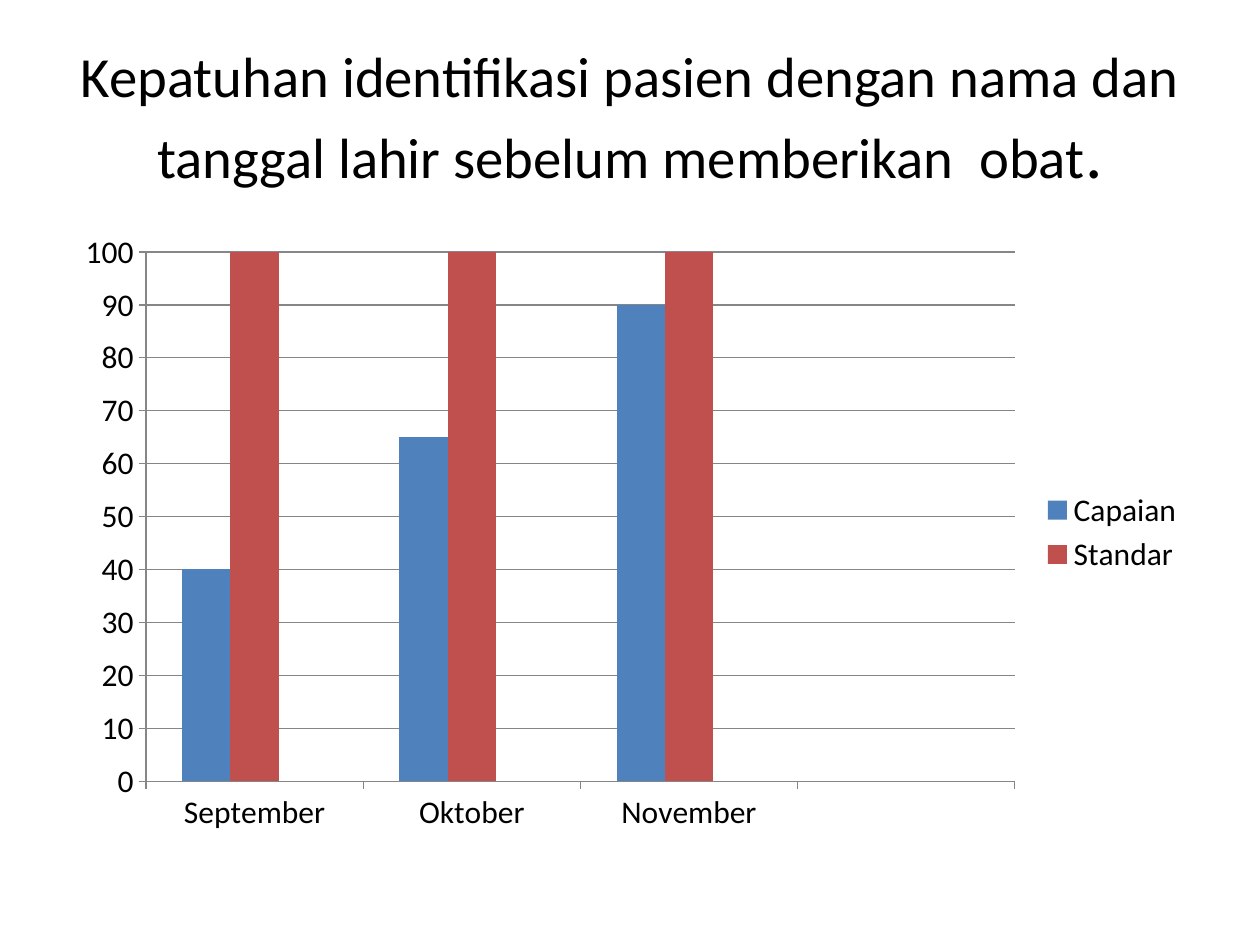
import dataclasses

import lxml.etree
import pptx
import pptx.chart.data
import pptx.dml.color
import pptx.enum.chart
import pptx.enum.text
import pptx.oxml
import pptx.oxml.ns
import pptx.util

COLORS = {
    "text": "000000",
    "grid": "868686",
    "achieved": "4F81BD",
    "standard": "C0504D",
    "empty": "9BBB59",
}
FONT = "Calibri"


@dataclasses.dataclass(frozen=True)
class Series:
    name: str
    values: tuple[float | None, ...]
    color: str
    in_legend: bool = True


CATEGORIES = ("September", "Oktober", "November", "")
SERIES = (
    Series("Capaian", (40, 65, 90, None), "achieved"),
    Series("Standar", (100, 100, 100, None), "standard"),
    Series("Series 3", (None,) * 4, "empty", in_legend=False),
)


def rgb(name: str) -> pptx.dml.color.RGBColor:
    return pptx.dml.color.RGBColor.from_string(COLORS[name])


def format_font(font, size: float, color: str = "text") -> None:
    font.name = FONT
    font.size = pptx.util.Pt(size)
    font.bold = False
    font.color.rgb = rgb(color)


def add_text(paragraph, text: str, *, size: float, color: str = "text") -> None:
    run = paragraph.add_run()
    run.text = text
    format_font(run.font, size, color)


def format_line(line) -> None:
    line.color.rgb = rgb("grid")
    line.width = pptx.util.Pt(0.75)


def fill_title(title) -> None:
    title.left, title.top = pptx.util.Pt(36), pptx.util.Pt(21.6)
    title.width, title.height = pptx.util.Pt(648), pptx.util.Pt(90)
    frame = title.text_frame
    frame.word_wrap = True
    frame.auto_size = pptx.enum.text.MSO_AUTO_SIZE.NONE
    frame.vertical_anchor = pptx.enum.text.MSO_ANCHOR.MIDDLE
    paragraph = frame.paragraphs[0]
    paragraph.alignment = pptx.enum.text.PP_ALIGN.CENTER
    add_text(
        paragraph,
        "Kepatuhan identifikasi pasien dengan nama dan tanggal lahir sebelum memberikan  obat",
        size=32.4,
    )
    add_text(paragraph, ".", size=39.6)


def hide_legend_entry(legend, index: int) -> None:
    entry = pptx.oxml.parse_xml(
        f'<c:legendEntry {pptx.oxml.ns.nsdecls("c")}>'
        f'<c:idx val="{index}"/><c:delete val="1"/></c:legendEntry>'
    )
    legend._element.find(pptx.oxml.ns.qn("c:legendPos")).addnext(entry)


def add_column_chart(slide, series_list: tuple[Series, ...]) -> None:
    data = pptx.chart.data.CategoryChartData()
    data.categories = CATEGORIES
    for series in series_list:
        data.add_series(series.name, series.values)
    chart = slide.shapes.add_chart(
        pptx.enum.chart.XL_CHART_TYPE.COLUMN_CLUSTERED,
        pptx.util.Pt(36), pptx.util.Pt(126), pptx.util.Pt(648), pptx.util.Pt(356.4),
        data,
    ).chart
    chart.has_title = False
    format_font(chart.font, 18)

    plot = chart.plots[0]
    plot.gap_width = 150
    plot.overlap = 0
    plot.vary_by_categories = False
    for drawn, series in zip(plot.series, series_list):
        drawn.format.fill.solid()
        drawn.format.fill.fore_color.rgb = rgb(series.color)
        drawn.invert_if_negative = False

    for axis in (chart.category_axis, chart.value_axis):
        axis.major_tick_mark = pptx.enum.chart.XL_TICK_MARK.OUTSIDE
        axis.minor_tick_mark = pptx.enum.chart.XL_TICK_MARK.NONE
        format_line(axis.format.line)
    value_axis = chart.value_axis
    value_axis.minimum_scale = 0
    value_axis.maximum_scale = 100
    value_axis.major_unit = 10
    value_axis.has_major_gridlines = True
    format_line(value_axis.major_gridlines.format.line)

    chart.has_legend = True
    chart.legend.position = pptx.enum.chart.XL_LEGEND_POSITION.RIGHT
    chart.legend.include_in_layout = False
    for index, series in enumerate(series_list):
        if not series.in_legend:
            hide_legend_entry(chart.legend, index)


def main() -> None:
    presentation = pptx.Presentation()
    presentation.slide_width = pptx.util.Pt(720)
    presentation.slide_height = pptx.util.Pt(540)
    slide = presentation.slides.add_slide(presentation.slide_layouts[5])
    fill_title(slide.shapes.title)
    add_column_chart(slide, SERIES)
    presentation.save("out.pptx")


if __name__ == "__main__":
    main()
